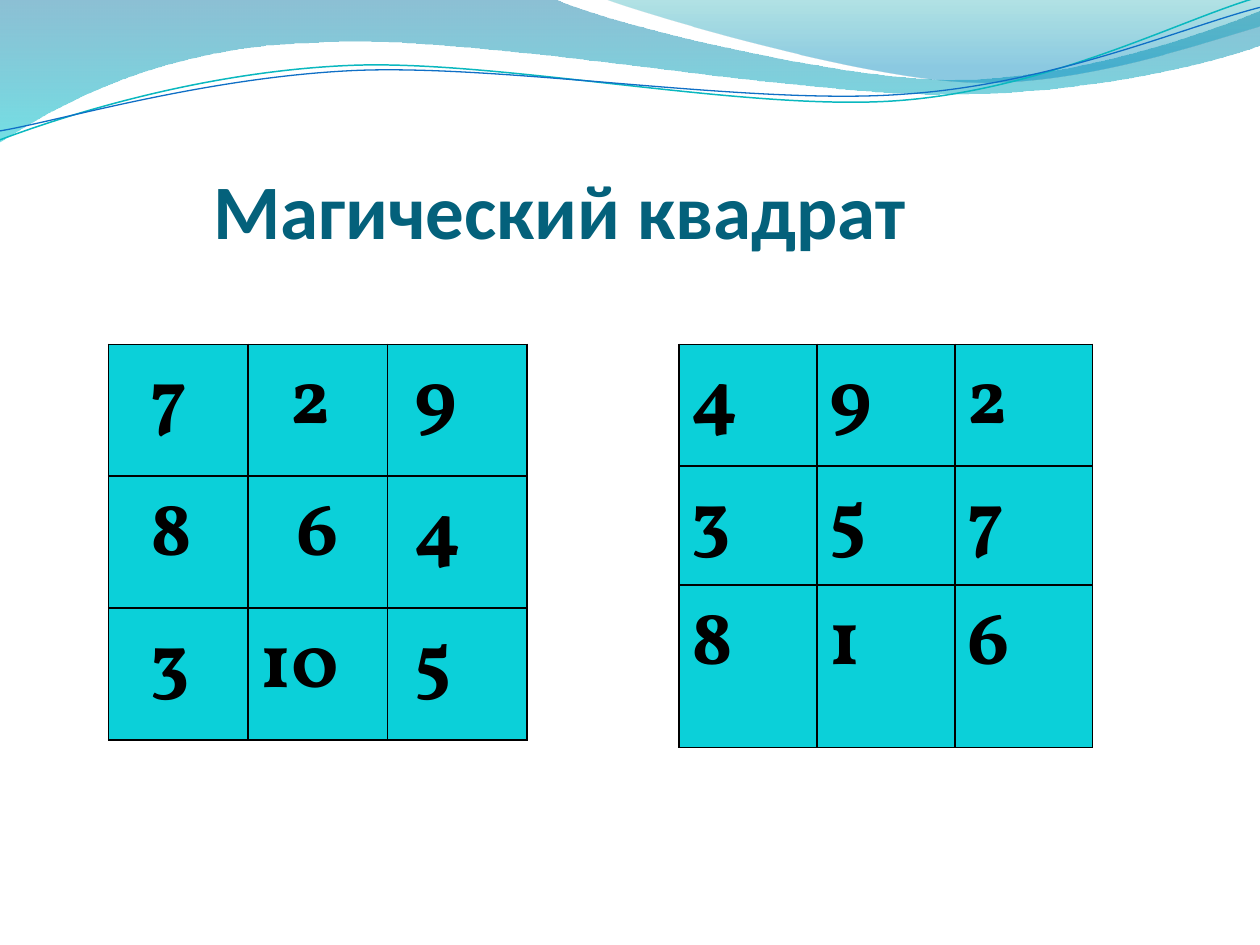
"""Build a slide with two magic squares under a wave header."""
from lxml import etree
from pptx import Presentation
from pptx.dml.color import RGBColor
from pptx.enum.text import MSO_ANCHOR, PP_ALIGN
from pptx.oxml.ns import qn
from pptx.util import Cm, Pt

LEFT, MID = PP_ALIGN.LEFT, PP_ALIGN.CENTER
TOP, BOTTOM = MSO_ANCHOR.TOP, MSO_ANCHOR.BOTTOM
BLACK = RGBColor(0x00, 0x00, 0x00)
NAVY = RGBColor(0x04, 0x61, 0x7B)
AQUA = RGBColor(0x0B, 0xD0, 0xD9)
TEAL = RGBColor(0x0A, 0xB8, 0xBF)
BLUE = RGBColor(0x0F, 0x6F, 0xC6)
DEEP = RGBColor(0x00, 0x74, 0xA1)
CYAN = RGBColor(0x00, 0xC6, 0xCF)
GREEN = RGBColor(0x00, 0xA1, 0xA9)
SKY = RGBColor(0x00, 0x8B, 0xBF)

TITLE = "Магический квадрат"
SQUARES = [
    {"left": 2.19, "wide": 2.81, "rows": [2.66, 2.66, 2.66],
     "nums": [[7, 2, 9], [8, 6, 4], [3, 10, 5]],
     "dents": [[0.6, 0.6, 0.3], [0.6, 0, 0.3], [0.6, 0, 0.3]], "mids": [6]},
    {"left": 13.69, "wide": 2.78, "rows": [2.45, 2.4, 3.28],
     "nums": [[4, 9, 2], [3, 5, 7], [8, 1, 6]],
     "dents": [[0] * 3] * 3, "mids": []},
]
BANDS = [
    ([(0, 0), (11.18, -0.02), (12.09, 0.43, 16.87, 1.6, 19.25, 1.6),
      (21.67, 1.6, 24.33, 0.66, 25.4, 0.23), (25.42, 0.91),
      (24.97, 1.12, 22.1, 1.93, 18.95, 1.9),
      (15.8, 1.9, 9.7, 0.71, 6.53, 0.86),
      (3.28, 0.91, 1.17, 2.11, -0.02, 2.87)],
     [(0, DEEP, 45), (1, CYAN, 55)]),
    ([(12.17, -0.02), (12.93, 0.28, 17.32, 1.57, 19.53, 1.65),
      (21.74, 1.75, 24.41, 0.81, 25.4, 0.53), (25.4, 0)],
     [(0, GREEN, 30), (0.8, SKY, 45)]),
]
LINES = [
    ([(0, 2.82), (1.22, 2.36, 4.01, 1.45, 7.04, 1.32),
      (10.03, 1.19, 15.06, 2.26, 18.11, 2.03),
      (21.16, 1.8, 23.83, 0.38, 25.35, -0.05)], TEAL, 0.85),
    ([(0, 2.64), (1.19, 2.44, 4.17, 1.55, 7.19, 1.42),
      (10.24, 1.3, 15.16, 2.13, 18.21, 1.9),
      (21.23, 1.7, 23.9, 0.53, 25.4, 0.15)], BLUE, 0.75),
]


def wave(slide, steps, close):
    """Draw an outline whose six-number steps are Bezier curves."""
    ends = [(Cm(step[-2]), Cm(step[-1])) for step in steps]
    pen = slide.shapes.build_freeform(*ends[0])
    pen.add_line_segments(ends[1:], close=close)
    shape = pen.convert_to_shape()
    shape.shadow.inherit = False
    nodes = list(shape.element.iter(qn("a:lnTo")))
    for node, step in zip(nodes, steps[1:]):
        if len(step) == 6:
            node.tag = qn("a:cubicBezTo")
            for i in (0, 1):
                x, y = Cm(step[2 * i]) - shape.left, Cm(step[2 * i + 1]) - shape.top
                node.insert(i, etree.Element(qn("a:pt"), x=str(x), y=str(y)))
    return shape


def band(slide, steps, stops):
    """Draw a wave with a clear gradient."""
    shape = wave(slide, steps, True)
    shape.line.fill.background()
    shape.fill.gradient()
    shape.fill.gradient_angle = 270
    for stop, (place, color, _) in zip(shape.fill.gradient_stops, stops):
        stop.position = place
        stop.color.rgb = color
    tints = shape.element.spPr.find(qn("a:gradFill")).iter(qn("a:srgbClr"))
    for tint, (_, _, alpha) in zip(tints, stops):
        etree.SubElement(tint, qn("a:alpha")).set("val", str(alpha * 1000))


def put(frame, text, font="Vollkorn", color=BLACK, align=LEFT, anchor=TOP):
    """Write bold text into a frame."""
    frame.word_wrap = True
    frame.vertical_anchor = anchor
    part = frame.paragraphs[0]
    part.alignment = align
    run = part.add_run()
    run.text = text
    run.font.name, run.font.size, run.font.bold = font, Pt(44), True
    run.font.color.rgb = color


def edge(cell):
    """Give a cell thin black borders."""
    props = cell._tc.get_or_add_tcPr()
    for i, side in enumerate(("lnL", "lnR", "lnT", "lnB")):
        line = etree.Element(qn("a:" + side), w=str(Pt(1)))
        fill = etree.SubElement(line, qn("a:solidFill"))
        etree.SubElement(fill, qn("a:srgbClr")).set("val", str(BLACK))
        props.insert(i, line)


def square(slide, left, wide, rows, nums, dents, mids):
    """Draw one number square."""
    table = slide.shapes.add_table(
        3, 3, Cm(left), Cm(6.94), Cm(3 * wide), Cm(sum(rows))).table
    table.first_row = table.horz_banding = False
    for i in range(3):
        table.columns[i].width = Cm(wide)
        table.rows[i].height = Cm(rows[i])
        for j, num in enumerate(nums[i]):
            cell = table.cell(i, j)
            cell.fill.solid()
            cell.fill.fore_color.rgb = AQUA
            edge(cell)
            cell.margin_left = Cm(0.25 + dents[i][j])
            put(cell.text_frame, str(num), align=MID if num in mids else LEFT)


def main():
    """Build and save the slide."""
    deck = Presentation()
    deck.slide_width, deck.slide_height = Cm(25.4), Cm(19.05)
    slide = deck.slides.add_slide(deck.slide_layouts[6])
    for steps, stops in BANDS:
        band(slide, steps, stops)
    for steps, color, width in LINES:
        shape = wave(slide, steps, False)
        shape.fill.background()
        shape.line.color.rgb = color
        shape.line.width = Pt(width)
    frame = slide.shapes.add_textbox(Cm(1.27), Cm(1.96), Cm(22.86), Cm(3.18)).text_frame
    frame.margin_left = frame.margin_bottom = 0
    frame.margin_right = Cm(2.82)
    put(frame, TITLE, font="Calibri", color=NAVY, align=MID, anchor=BOTTOM)
    for item in SQUARES:
        square(slide, **item)
    deck.save("out.pptx")


if __name__ == "__main__":
    main()
